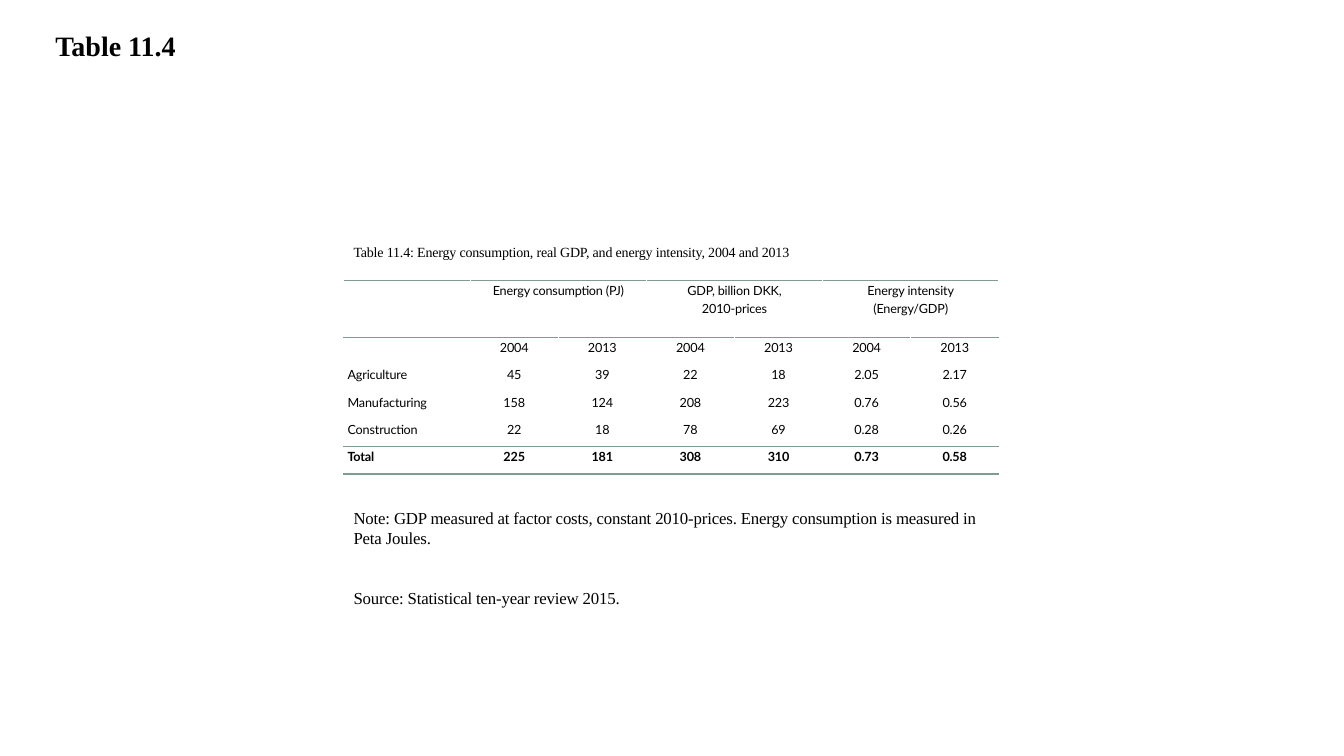
from dataclasses import dataclass

from lxml import etree
from pptx import Presentation
from pptx import util as u
from pptx.dml import color
from pptx.enum import text as t
from pptx.oxml import ns


@dataclass(frozen=True)
class Theme:
    ink: str = "000000"
    rule: str = "7F9C90"
    serif: str = "Times New Roman"
    sans: str = "Lato"
    title: float = 20
    note: float = 12
    label: float = 10
    cell: float = 9
    leading: float = 12.8


@dataclass(frozen=True)
class Box:
    left: float
    top: float
    width: float
    height: float

    def spread(self) -> list[u.Length]:
        return [u.Cm(n) for n in (self.left, self.top, self.width, self.height)]


@dataclass(frozen=True)
class Para:
    words: str
    size: float
    before: float = 0
    after: float = 0
    line: float | None = None
    align: t.PP_ALIGN = t.PP_ALIGN.LEFT


@dataclass(frozen=True)
class Row:
    name: str
    values: tuple[str, ...]
    bold: bool = False


THEME = Theme()
TITLE = Box(1.14, 0.69, 5.03, 2.46)
LABEL = Box(8.66, 6.05, 16.92, 0.66)
NOTES = Box(8.66, 12.67, 16.92, 2.82)
GRID = Box(8.66, 7.06, 16.51, 4.89)
NAME_W, VALUE_W = 3.19, 2.22
HEAD_H, ROW_H = 1.44, 0.69
INSET = 0.1

HEADS = (
    ("Energy consumption (PJ)",),
    ("GDP, billion DKK,", "2010-prices"),
    ("Energy intensity", "(Energy/GDP)"),
)
ROWS = (
    Row("", ("2004", "2013") * len(HEADS)),
    Row("Agriculture", ("45", "39", "22", "18", "2.05", "2.17")),
    Row("Manufacturing", ("158", "124", "208", "223", "0.76", "0.56")),
    Row("Construction", ("22", "18", "78", "69", "0.28", "0.26")),
    Row("Total", ("225", "181", "308", "310", "0.73", "0.58"), bold=True),
)
# Sides ruled in each table row
RULES = {0: "TB", 1: "T", 4: "B", 5: "TB"}


def add_run(para, words: str, face: str, size: float,
            bold: bool = False, tight: bool = True) -> None:
    run = para.add_run()
    run.text = words
    font = run.font
    font.name, font.size, font.bold = face, u.Pt(size), bold
    font.color.rgb = color.RGBColor.from_string(THEME.ink)
    if tight:
        run.font._element.set("spc", "-10")


def add_title(slide, words: str) -> None:
    shape = slide.shapes.title
    shape.left, shape.top, shape.width, shape.height = TITLE.spread()
    frame = shape.text_frame
    frame.vertical_anchor = t.MSO_ANCHOR.TOP
    frame.auto_size = t.MSO_AUTO_SIZE.NONE
    para = frame.paragraphs[0]
    para.alignment, para.line_spacing = t.PP_ALIGN.LEFT, 0.9
    add_run(para, words, THEME.serif, THEME.title, bold=True, tight=False)


def add_text(slide, box: Box, paras: tuple[Para, ...]) -> None:
    frame = slide.shapes.add_textbox(*box.spread()).text_frame
    frame.word_wrap = True
    for i, item in enumerate(paras):
        para = frame.add_paragraph() if i else frame.paragraphs[0]
        para.alignment = item.align
        para.space_before, para.space_after = u.Pt(item.before), u.Pt(item.after)
        if item.line:
            para.line_spacing = u.Pt(item.line)
        add_run(para, item.words, THEME.serif, item.size)


def add_rule(cell, side: str) -> None:
    line = etree.SubElement(cell._tc.get_or_add_tcPr(), ns.qn(f"a:ln{side}"),
                            w=str(u.Pt(1)))
    fill = etree.SubElement(line, ns.qn("a:solidFill"))
    etree.SubElement(fill, ns.qn("a:srgbClr"), val=THEME.rule)


def fill_cell(cell, lines: tuple[str, ...], align: t.PP_ALIGN,
              bold: bool = False) -> None:
    para = cell.text_frame.paragraphs[0]
    para.alignment, para.line_spacing = align, u.Pt(THEME.leading)
    for i, words in enumerate(lines):
        if i:
            para.add_line_break()
        add_run(para, words, THEME.sans, THEME.cell, bold)


def style_cell(cell, sides: str) -> None:
    cell.margin_left = cell.margin_right = u.Cm(INSET)
    cell.margin_top = cell.margin_bottom = 0
    for side in sides:
        add_rule(cell, side)
    cell.fill.background()
    para = cell.text_frame.paragraphs[0]
    if not para.runs:
        etree.SubElement(para._p, ns.qn("a:endParaRPr"),
                         sz=str(int(THEME.cell * 100)))


def add_grid(slide) -> None:
    wide = 1 + 2 * len(HEADS)
    table = slide.shapes.add_table(len(ROWS) + 1, wide, *GRID.spread()).table
    table.first_row = table.horz_banding = False
    for i, col in enumerate(table.columns):
        col.width = u.Cm(VALUE_W if i else NAME_W)
    for i, row in enumerate(table.rows):
        row.height = u.Cm(ROW_H if i else HEAD_H)

    # Heads, each over two years
    for i, lines in enumerate(HEADS):
        cell = table.cell(0, 1 + 2 * i)
        cell.merge(table.cell(0, 2 + 2 * i))
        fill_cell(cell, lines, t.PP_ALIGN.CENTER)

    # Names and values
    for i, row in enumerate(ROWS, 1):
        if row.name:
            fill_cell(table.cell(i, 0), (row.name,), t.PP_ALIGN.JUSTIFY, row.bold)
        for j, value in enumerate(row.values, 1):
            fill_cell(table.cell(i, j), (value,), t.PP_ALIGN.CENTER, row.bold)

    # Insets and rules
    for i in range(len(ROWS) + 1):
        for j in range(wide):
            style_cell(table.cell(i, j), RULES.get(i, ""))


def main() -> None:
    deck = Presentation()
    deck.slide_width, deck.slide_height = u.Cm(33.87), u.Cm(19.05)
    slide = deck.slides.add_slide(deck.slide_layouts[5])
    add_grid(slide)
    add_text(slide, NOTES, (
        Para("Note: GDP measured at factor costs, constant 2010-prices. "
             "Energy consumption is measured in Peta Joules.",
             THEME.note, before=4, after=4),
        Para("Source: Statistical ten-year review 2015.",
             THEME.note, before=24, after=14.5),
    ))
    add_text(slide, LABEL, (
        Para("Table 11.4: Energy consumption, real GDP, and energy intensity, "
             "2004 and 2013", THEME.label, after=6, line=11,
             align=t.PP_ALIGN.JUSTIFY),
    ))
    add_title(slide, "Table 11.4")
    deck.save("out.pptx")


if __name__ == "__main__":
    main()
